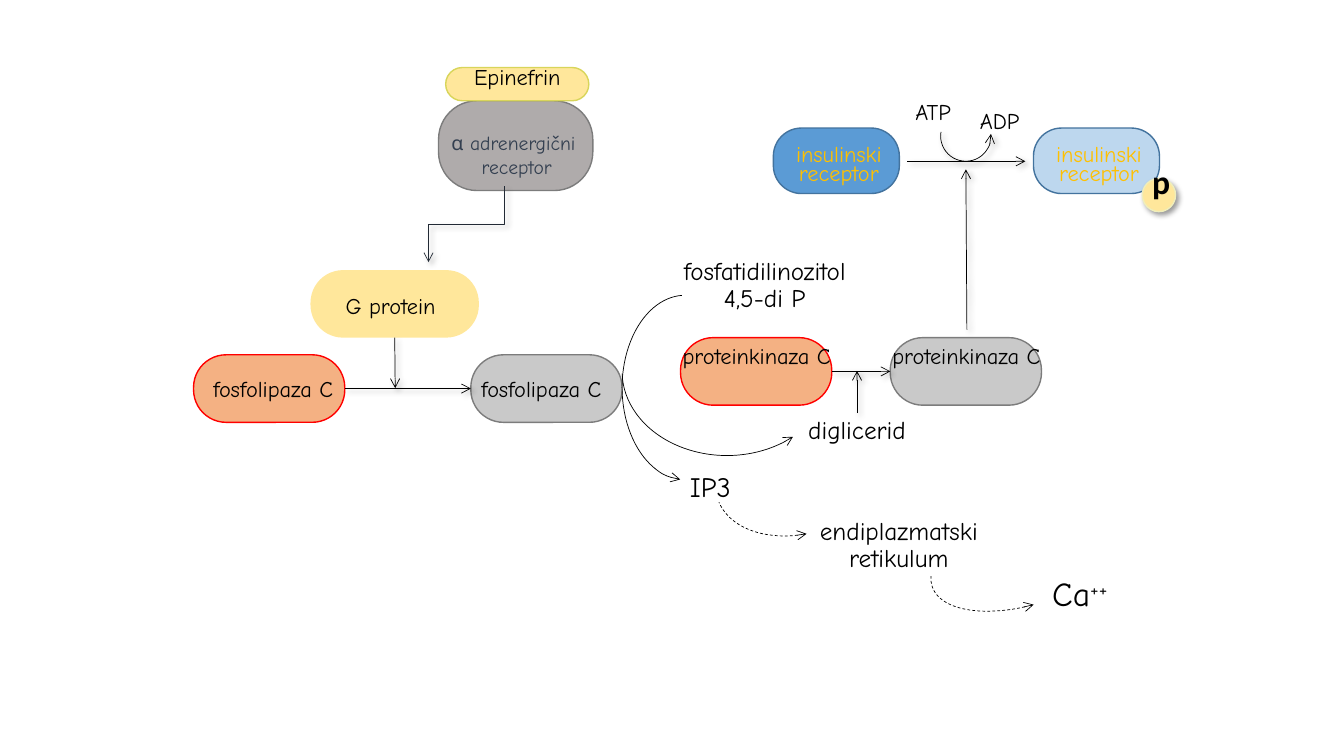
import pptx
import pptx.util
import pptx.dml.color
import pptx.enum.dml
import pptx.enum.shapes
import pptx.enum.text
import pptx.oxml
import pptx.oxml.ns
import lxml.etree

Inches, Pt = pptx.util.Inches, pptx.util.Pt
SHAPE = pptx.enum.shapes.MSO_SHAPE
CONNECTOR = pptx.enum.shapes.MSO_CONNECTOR
ALIGN = pptx.enum.text.PP_ALIGN
qn = pptx.oxml.ns.qn

COLORS = {
    "ink": "000000", "yellow": "FFE79B", "yellow_edge": "D8D55A", "pale_edge": "EFEEBC",
    "taupe": "AFABAB", "grey": "C9C9C9", "grey_edge": "7C7C7C",
    "orange": "F4B183", "red": "FF0000", "slate": "333F50", "navy": "222A35",
    "blue": "5B9BD5", "light_blue": "BDD7EE", "blue_edge": "43739E", "gold": "FFC000",
}


def rgb(name):
    return pptx.dml.color.RGBColor.from_string(COLORS[name])


def set_effects(sp, shadow):
    """Replace the theme shadow by none, or by a soft one to the lower right."""
    sp_pr = sp._element.spPr
    effects = sp_pr.find(qn("a:effectLst"))
    if effects is None:
        effects = lxml.etree.SubElement(sp_pr, qn("a:effectLst"))
    if shadow:
        outer = lxml.etree.SubElement(effects, qn("a:outerShdw"), blurRad=str(Pt(4)),
                                      dist=str(Pt(3)), dir="2700000", algn="tl", rotWithShape="0")
        color = lxml.etree.SubElement(outer, qn("a:srgbClr"), val=COLORS["ink"])
        lxml.etree.SubElement(color, qn("a:alpha"), val="40000")


def set_line(sp, color, width, arrow=None):
    sp.line.color.rgb = rgb(color)
    sp.line.width = Pt(width)
    if arrow:
        lxml.etree.SubElement(sp.line._get_or_add_ln(), qn("a:" + arrow), type="arrow")


def add_node(slide, x, y, w, h, fill, edge=None, rounding=0.482, kind=SHAPE.ROUNDED_RECTANGLE,
             shadow=False):
    sp = slide.shapes.add_shape(kind, Inches(x), Inches(y), Inches(w), Inches(h))
    if kind == SHAPE.ROUNDED_RECTANGLE:
        sp.adjustments[0] = rounding
    sp.fill.solid()
    sp.fill.fore_color.rgb = rgb(fill)
    if edge:
        set_line(sp, edge, 1)
    else:
        sp.line.fill.background()
    sp.shadow.inherit = False
    set_effects(sp, shadow)
    return sp


def add_label(slide, x, y, w, h, lines, size, color="ink", spacing=19, wrap=True,
              align=ALIGN.CENTER, font="Comic Neue", bold=False, superscript=None):
    tf = slide.shapes.add_textbox(Inches(x), Inches(y), Inches(w), Inches(h)).text_frame
    tf.word_wrap = wrap
    for i, line in enumerate(lines):
        p = tf.add_paragraph() if i else tf.paragraphs[0]
        p.alignment = align
        if spacing:
            p.line_spacing = Pt(spacing)
        for text in filter(None, (line, superscript)):
            r = p.add_run()
            r.text = text
            r.font.name, r.font.size, r.font.bold = font, Pt(size), bold
            r.font.color.rgb = rgb(color)
            if text == superscript:
                r.font._element.set("baseline", "30000")


def add_arrow(slide, x1, y1, x2, y2, begin=None, end=None, kind=CONNECTOR.STRAIGHT, color="ink"):
    """begin and end are optional (shape, side) pairs to join."""
    cxn = slide.shapes.add_connector(kind, Inches(x1), Inches(y1), Inches(x2), Inches(y2))
    if begin:
        cxn.begin_connect(*begin)
    if end:
        cxn.end_connect(*end)
    set_line(cxn, color, 0.5, "tailEnd")
    set_effects(cxn, True)
    return cxn


def add_arc(slide, x, y, w, h, start, stop, rotation=0, dashed=False, shadow=False):
    """Arc from start to stop, in degrees clockwise, with its arrowhead at the start."""
    sp = slide.shapes.add_shape(SHAPE.ARC, Inches(x), Inches(y), Inches(w), Inches(h))
    for i, angle in enumerate((start, stop)):
        sp.adjustments[i] = angle * 0.6
    sp.rotation = rotation
    sp.fill.background()
    if dashed:
        sp.line.dash_style = pptx.enum.dml.MSO_LINE.DASH
    set_line(sp, "ink", 0.5, "headEnd")
    sp.shadow.inherit = False
    set_effects(sp, shadow)


def adrenergic_receptor(slide, x, y):
    add_node(slide, x + 0.1, y + 0.42, 1.53, 0.89, "taupe", "grey_edge", 0.429)
    add_label(slide, x, y + 0.67, 1.75, 0.57, ["α adrenergični ", "receptor"], 14, "slate", None)
    # Down, left, down to the G protein
    bent = add_arrow(slide, x, y + 1.27, x + 0.75, y + 2.02, kind=CONNECTOR.ELBOW, color="navy")
    bent._element.spPr.find(qn("a:xfrm")).set("rot", "5400000")
    # Bound hormone
    add_node(slide, x + 0.17, y + 0.09, 1.42, 0.33, "yellow", "yellow_edge", 0.5)
    add_label(slide, x + 0.17, y, 1.42, 0.37, ["Epinefrin"], 16, spacing=None)


def phospholipase(slide, x, y):
    g_protein = add_node(slide, x + 1.16, y, 1.67, 0.67, "yellow")
    add_label(slide, x + 1.41, y + 0.17, 1.18, 0.37, ["G protein"], 16, spacing=None,
              wrap=False, align=ALIGN.LEFT)
    inactive = add_node(slide, x, y + 0.84, 1.5, 0.67, "orange", "red")
    active = add_node(slide, x + 2.75, y + 0.84, 1.5, 0.67, "grey", "grey_edge")
    for label_x in (x, x + 2.66):
        add_label(slide, label_x, y + 1, 1.58, 0.37, ["fosfolipaza C"], 16)
    add_arrow(slide, x + 2, y + 0.67, x + 2, y + 1.17, begin=(g_protein, 2))
    add_arrow(slide, x + 1.5, y + 1.17, x + 2.75, y + 1.17, (inactive, 3), (active, 1))


def second_messengers(slide, x, y):
    add_label(slide, x + 0.33, y, 2.17, 0.63, ["fosfatidilinozitol 4,5-di P"], 18)
    add_label(slide, x + 0.5, y + 2.16, 0.75, 0.37, ["IP3"], 20)
    add_label(slide, x + 1.58, y + 1.58, 1.5, 0.37, ["diglicerid"], 18)
    add_label(slide, x + 1.66, y + 2.58, 2.17, 0.63, ["endiplazmatski retikulum"], 18)
    add_label(slide, x + 4.08, y + 3.25, 0.92, 0.37, ["Ca"], 24, superscript="++")
    # Cleavage into IP3 and diglyceride
    add_arc(slide, x, y + 0.41, 1.25, 1.83, 93.05, 268)
    add_arc(slide, x, y + 0.33, 2.08, 1.67, 44.73, 178.76)
    # Release of calcium
    add_arc(slide, x + 1.19, y + 1.22, 1.25, 1.83, 197.6, 268, 251, dashed=True)
    add_arc(slide, x + 3.57, y + 1.91, 1, 2.1, 197.6, 275.82, 251, dashed=True)


def protein_kinase(slide, x, y):
    states = []
    for i, (fill, edge) in enumerate((("orange", "red"), ("grey", "grey_edge"))):
        left = x + 2.08 * i
        states.append(add_node(slide, left, y, 1.5, 0.67, fill, edge))
        add_label(slide, left - 0.08, y, 1.67, 0.63, ["proteinkinaza C"], 16, wrap=False)
    add_arrow(slide, x + 1.5, y + 0.33, x + 2.08, y + 0.33, (states[0], 3), (states[1], 1))
    add_arrow(slide, x + 1.75, y + 0.75, x + 1.75, y + 0.33)
    add_arrow(slide, x + 2.84, y - 0.08, x + 2.83, y - 1.67)


def insulin_receptor(slide, x, y):
    for i, fill in enumerate(("blue", "light_blue")):
        left = x + 2.58 * i
        add_node(slide, left, y, 1.25, 0.65, fill, "blue_edge", 0.429)
        add_label(slide, left + 0.08, y + 0.14, 1.14, 0.5, ["insulinski", "receptor"], 16,
                  "gold", 14, wrap=False)
    # Phosphate group
    add_node(slide, x + 3.66, y + 0.5, 0.33, 0.33, "yellow", "pale_edge", kind=SHAPE.OVAL,
             shadow=True)
    add_label(slide, x + 3.66, y + 0.41, 0.33, 0.37, ["p"], 24, font="Calibri", bold=True)
    # Phosphorylation by ATP
    add_arrow(slide, x + 1.33, y + 0.33, x + 2.5, y + 0.33)
    add_arc(slide, x + 1.66, y - 0.17, 0.5, 0.5, 355.23, 189.63, shadow=True)
    add_label(slide, x + 1.25, y - 0.34, 0.67, 0.37, ["ATP"], 16)
    add_label(slide, x + 1.91, y - 0.25, 0.67, 0.37, ["ADP"], 16)


def main():
    prs = pptx.Presentation()
    prs.slide_width, prs.slide_height = Inches(13.33), Inches(7.5)
    slide = prs.slides.add_slide(prs.slide_layouts[6])
    adrenergic_receptor(slide, 4.25, 0.58)
    phospholipase(slide, 1.92, 2.68)
    second_messengers(slide, 6.17, 2.52)
    protein_kinase(slide, 6.75, 3.35)
    insulin_receptor(slide, 7.67, 1.27)
    prs.save("out.pptx")


if __name__ == "__main__":
    main()
